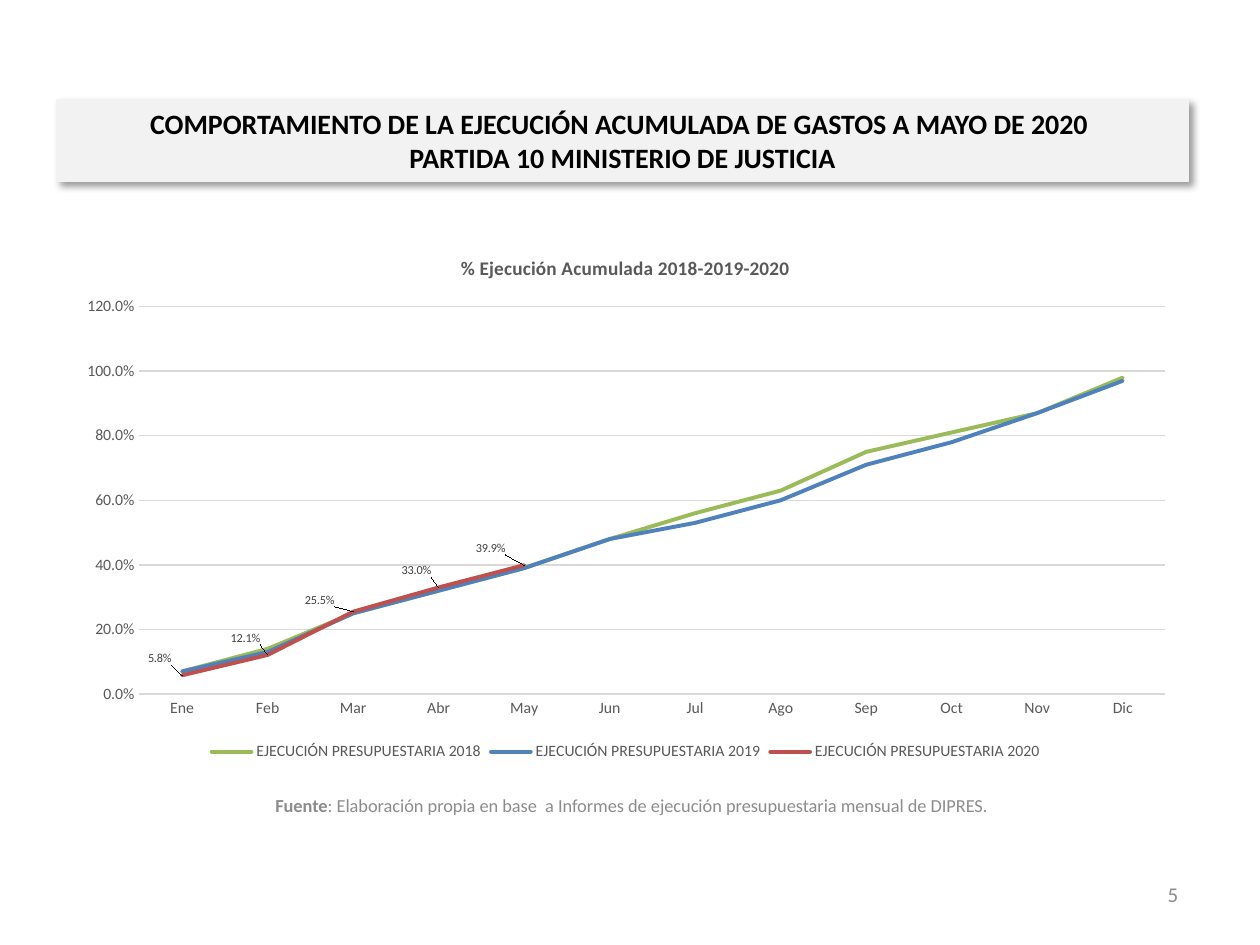
from dataclasses import dataclass

from pptx import Presentation, oxml
from pptx.chart.data import CategoryChartData
from pptx.dml.color import RGBColor
from pptx.enum import chart as charts, shapes, text
from pptx.oxml import ns
from pptx.util import Pt


@dataclass(frozen=True)
class Theme:
    """Colours and type sizes of the slide."""
    font: str = "Calibri"
    black: str = "000000"
    banner: str = "F2F2F2"
    muted: str = "8C8C8C"
    axis: str = "595959"
    grid: str = "D9D9D9"
    label: str = "404040"
    series: tuple = ("9BBB59", "4F81BD", "C0504D")
    heading_size: float = 16
    page_size: float = 12
    source_size: float = 10.5
    title_size: float = 11
    axis_size: float = 9
    label_size: float = 7


THEME = Theme()
HEADING = ("COMPORTAMIENTO DE LA EJECUCIÓN ACUMULADA DE GASTOS A MAYO DE 2020 \v"
           "PARTIDA 10 MINISTERIO DE JUSTICIA")
SOURCE = ("Fuente", ": Elaboración propia en base  a Informes de ejecución "
          "presupuestaria mensual de DIPRES.")
MONTHS = "Ene Feb Mar Abr May Jun Jul Ago Sep Oct Nov Dic".split()
EXECUTION = {
    2018: (0.07, 0.14, 0.25, 0.32, 0.39, 0.48, 0.56, 0.63, 0.75, 0.81, 0.87, 0.98),
    2019: (0.07, 0.13, 0.25, 0.32, 0.39, 0.48, 0.53, 0.6, 0.71, 0.78, 0.87, 0.97),
    2020: (0.058, 0.121, 0.255, 0.33, 0.399),
}
LABEL_SHIFTS = ((-0.02, -0.01), (-0.02, -0.01), (-0.03, 0), (-0.02, -0.01), (-0.03, -0.01))


def style_font(font, size, colour, bold=False):
    """Set typeface, size, colour and weight."""
    font.name, font.size, font.bold = THEME.font, Pt(size), bold
    font.color.rgb = RGBColor.from_string(colour)


def style_line(line, colour, width=0.75):
    """Set a solid line."""
    line.color.rgb = RGBColor.from_string(colour)
    line.width = Pt(width)


def write_text(box, parts, align, size, colour, bold_parts):
    """Write one middle-anchored paragraph made of the given parts."""
    frame = box.text_frame
    frame.word_wrap = True
    frame.vertical_anchor = text.MSO_ANCHOR.MIDDLE
    para = frame.paragraphs[0]
    para.text = parts[0]
    para.alignment = align
    for part in parts[1:]:
        para.add_run().text = part
    for index, span in enumerate(para.runs):
        bold = index < bold_parts or "\v" in parts[0]
        style_font(span.font, size, colour, bold)


def add_text(page, bounds, parts, align, size, colour, bold_parts=0):
    """Add a plain text box."""
    box = page.shapes.add_textbox(*map(Pt, bounds))
    write_text(box, parts, align, size, colour, bold_parts)


def add_banner(page, bounds, heading):
    """Add the heading rectangle with its soft shadow."""
    box = page.shapes.add_shape(shapes.MSO_SHAPE.RECTANGLE, *map(Pt, bounds))
    box.fill.solid()
    box.fill.fore_color.rgb = RGBColor.from_string(THEME.banner)
    style_line(box.line, THEME.banner)
    box.shadow.inherit = False
    effects = box.element.spPr.find(ns.qn("a:effectLst"))
    effects.append(oxml.parse_xml(
        f'<a:outerShdw {ns.nsdecls("a")} blurRad="{Pt(4)}" dist="{Pt(3)}" dir="2700000" '
        f'algn="tl" rotWithShape="0"><a:srgbClr val="{THEME.black}">'
        '<a:alpha val="40000"/></a:srgbClr></a:outerShdw>'))
    write_text(box, [heading], text.PP_ALIGN.CENTER, THEME.heading_size, THEME.black, 1)
    box.text_frame.auto_size = text.MSO_AUTO_SIZE.SHAPE_TO_FIT_TEXT


def manual_layout(**values):
    """Make a chart layout element from fractions of the chart."""
    items = "".join(f'<c:{name} val="{value}"/>' for name, value in values.items())
    return oxml.parse_xml(
        f'<c:layout {ns.nsdecls("c")}><c:manualLayout>{items}</c:manualLayout></c:layout>')


def style_axes(chart):
    """Style both axes and the horizontal grid."""
    months, shares = chart.category_axis, chart.value_axis
    for axis in (months, shares):
        axis.major_tick_mark = axis.minor_tick_mark = charts.XL_TICK_MARK.NONE
        style_font(axis.tick_labels.font, THEME.axis_size, THEME.axis)
    style_line(months.format.line, THEME.grid)
    shares.format.line.fill.background()
    shares.has_major_gridlines = True
    style_line(shares.major_gridlines.format.line, THEME.grid)
    shares.minimum_scale, shares.maximum_scale, shares.major_unit = 0, 1.2, 0.2
    shares.tick_labels.number_format = "0.0%"
    shares.tick_labels.number_format_is_linked = False


def label_points(chart, series):
    """Label each point of a series, shifted up and to the left."""
    for index in range(len(LABEL_SHIFTS)):
        label = series.points[index].data_label
        style_font(label.font, THEME.label_size, THEME.label)
        label.position = charts.XL_LABEL_POSITION.ABOVE
    for label, (x, y) in zip(chart.element.iter(ns.qn("c:dLbl")), LABEL_SHIFTS):
        label.insert(1, manual_layout(x=x, y=y))


def add_line_chart(page, bounds, title):
    """Add the line chart of accumulated execution."""
    data = CategoryChartData(number_format="0.0%")
    data.categories = MONTHS
    for year, values in EXECUTION.items():
        data.add_series(f"EJECUCIÓN PRESUPUESTARIA {year}", values)
    chart = page.shapes.add_chart(
        charts.XL_CHART_TYPE.LINE, *map(Pt, bounds), data).chart
    style_font(chart.font, 10, THEME.black)
    chart.has_title = True
    chart.chart_title.include_in_layout = False
    chart.chart_title.text_frame.text = title
    span = chart.chart_title.text_frame.paragraphs[0].runs[0]
    style_font(span.font, THEME.title_size, THEME.axis, True)
    chart.has_legend = True
    chart.legend.position = charts.XL_LEGEND_POSITION.BOTTOM
    chart.legend.include_in_layout = False
    style_font(chart.legend.font, THEME.axis_size, THEME.axis)
    style_axes(chart)
    plot = chart.plots[0]
    plot.vary_by_categories = False
    for series, colour in zip(plot.series, THEME.series):
        series.smooth = False
        style_line(series.format.line, colour, 2.25)
    for outline in chart.element.iterfind(".//" + ns.qn("c:ser") + "/" + ns.qn("c:spPr")
                                          + "/" + ns.qn("a:ln")):
        outline.set("cap", "rnd")
    label_points(chart, plot.series[2])
    area = chart.element.find(".//" + ns.qn("c:plotArea"))
    for layout in area.findall(ns.qn("c:layout")):
        area.remove(layout)
    area.insert(0, manual_layout(layoutTarget="inner", xMode="edge", yMode="edge",
                                 x=0.067, y=0.136, w=0.914, h=0.729))


def main():
    """Build and save the slide."""
    deck = Presentation()
    deck.slide_width, deck.slide_height = Pt(720), Pt(540)
    page = deck.slides.add_slide(deck.slide_layouts[6])
    add_text(page, (512.6, 496.8, 167.8, 28.8), ["5"], text.PP_ALIGN.RIGHT,
             THEME.page_size, THEME.muted)
    add_banner(page, (32.4, 56.9, 646.6, 46.8), HEADING)
    add_text(page, (30.2, 445.7, 661.7, 28.8), SOURCE, text.PP_ALIGN.CENTER,
             THEME.source_size, THEME.muted, 1)
    add_line_chart(page, (36.7, 133.9, 641.5, 303.8), "% Ejecución Acumulada 2018-2019-2020")
    deck.save("out.pptx")


if __name__ == "__main__":
    main()
